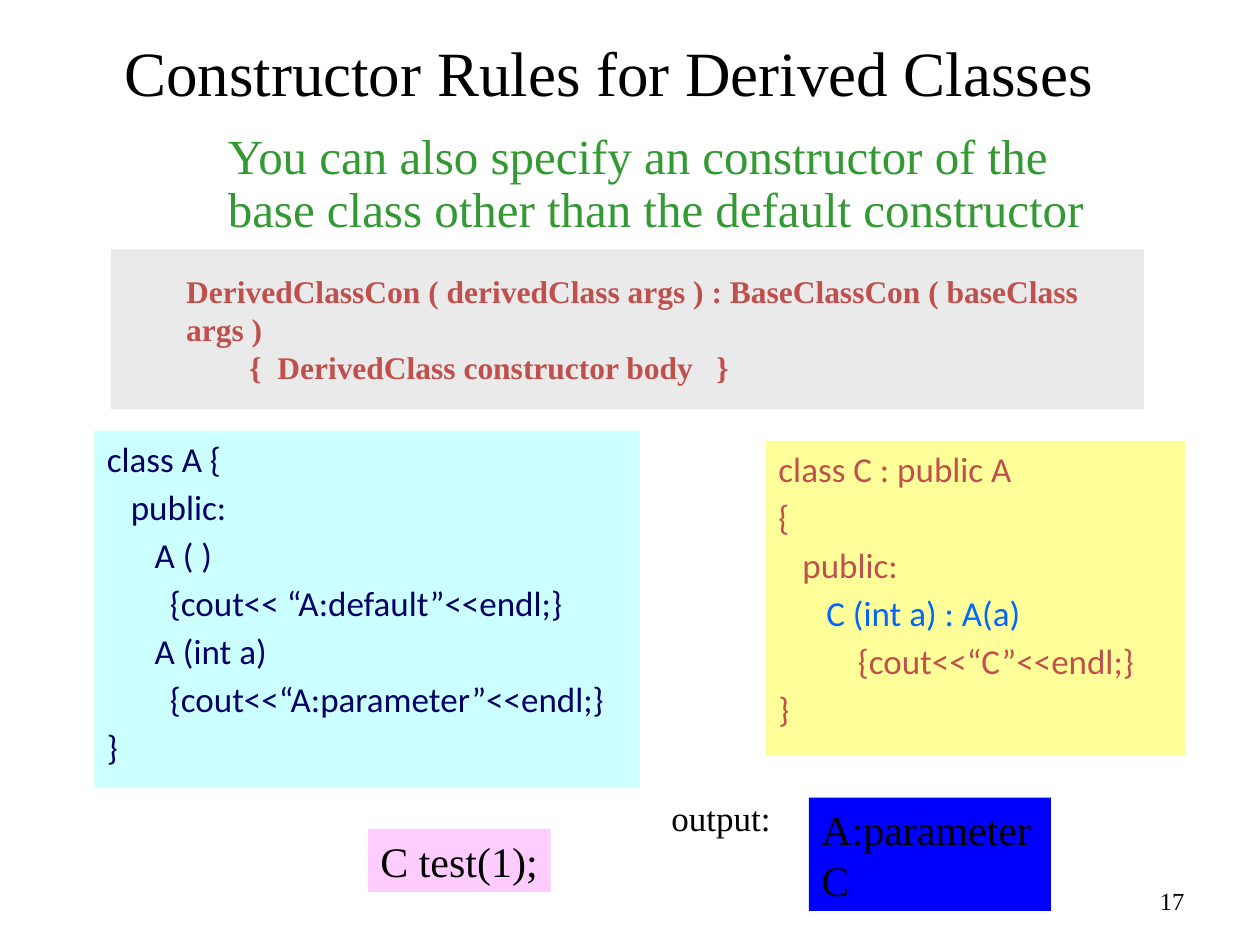
from pptx import Presentation
from pptx.dml.color import RGBColor
from pptx.enum.shapes import MSO_SHAPE
from pptx.enum.text import MSO_ANCHOR, MSO_AUTO_SIZE, PP_ALIGN
from pptx.util import Inches, Pt

RECT = MSO_SHAPE.RECTANGLE
TOP, MIDDLE, BOTTOM = MSO_ANCHOR.TOP, MSO_ANCHOR.MIDDLE, MSO_ANCHOR.BOTTOM
LEFT, CENTER, RIGHT = PP_ALIGN.LEFT, PP_ALIGN.CENTER, PP_ALIGN.RIGHT
FIXED = MSO_AUTO_SIZE.NONE
SERIF, SANS = "Times New Roman", "Calibri"

BLACK = RGBColor(0x00, 0x00, 0x00)
GREEN = RGBColor(0x33, 0x99, 0x33)
NAVY = RGBColor(0x00, 0x00, 0x66)
RED = RGBColor(0xC0, 0x50, 0x4D)
AZURE = RGBColor(0x00, 0x66, 0xFF)
CYAN = RGBColor(0xCC, 0xFF, 0xFF)
YELLOW = RGBColor(0xFF, 0xFF, 0x99)
PINK = RGBColor(0xFF, 0xCC, 0xFF)
BLUE = RGBColor(0x00, 0x00, 0xFF)
GREY = RGBColor(0xEA, 0xEA, 0xEA)


def write(shape, lines, size, color=BLACK, font=SERIF, bold=False, align=LEFT,
          anchor=TOP, wrap=True, before=0, spacing=None, inset=0.05):
    """Fill a shape with lines, each a (text, indent[, color]) tuple."""
    frame = shape.text_frame
    frame.auto_size = FIXED
    frame.word_wrap = wrap
    frame.vertical_anchor = anchor
    frame.margin_top = Inches(inset)
    for i, (text, indent, *tint) in enumerate(lines):
        para = frame.paragraphs[0] if i == 0 else frame.add_paragraph()
        para.alignment = align
        para.space_before = Pt(before)
        para.line_spacing = spacing
        props = para._p.get_or_add_pPr()
        props.set("marL", str(Inches(indent)))
        props.set("indent", "0")
        run = para.add_run()
        run.text = text
        run.font.name = font
        run.font.size = Pt(size)
        run.font.bold = bold
        run.font.color.rgb = tint[0] if tint else color


def label(slide, box, lines, size, **style):
    """Place plain text in a box."""
    write(slide.shapes.add_textbox(*map(Inches, box)), lines, size, **style)


def panel(slide, box, fill, lines, size, **style):
    """Place text on a filled rectangle without an outline."""
    shape = slide.shapes.add_shape(RECT, *map(Inches, box))
    shape.shadow.inherit = False
    shape.fill.solid()
    shape.fill.fore_color.rgb = fill
    shape.line.fill.background()
    write(shape, lines, size, **style)


def heading(slide, box):
    """Move and format the title placeholder."""
    title = slide.shapes.title
    title.left, title.top, title.width, title.height = map(Inches, box)
    write(title, [("Constructor Rules for Derived Classes ", 0)], 36,
          align=CENTER, anchor=BOTTOM)


def intro(slide, box):
    """Place the green statement of the rule."""
    label(slide, box, [("You can also specify an constructor of the base class "
                        "other than the default constructor", 0.38)],
          28, color=GREEN, before=5.6, spacing=0.9)


def syntax(slide, box):
    """Place the general form of a derived constructor."""
    panel(slide, box, GREY, [
        ("DerivedClassCon ( derivedClass args ) : BaseClassCon ( baseClass args )", 0.5),
        ("{  DerivedClass constructor body   }", 1),
    ], 18, color=RED, bold=True, inset=0.18)


def base(slide, box):
    """Place the code of the base class."""
    panel(slide, box, CYAN, [
        ("class A {", 0),
        ("public:", 0.19),
        ("A ( )", 0.38),
        ("{cout<< “A:default”<<endl;}", 0.5),
        ("A (int a)", 0.38),
        ("{cout<<“A:parameter”<<endl;}", 0.5),
        ("}", 0),
    ], 20, color=NAVY, font=SANS, before=3.5)


def derived(slide, box):
    """Place the code of the derived class."""
    panel(slide, box, YELLOW, [
        ("class C : public A", 0),
        ("{", 0),
        ("public:", 0.19),
        ("C (int a) : A(a)", 0.38, AZURE),
        ("{cout<<“C”<<endl;}", 0.63),
        ("}", 0),
    ], 20, color=RED, font=SANS, before=3.5)


def result(slide, call, name, out):
    """Place the test call, the output label and the output."""
    panel(slide, call, PINK, [("C test(1);", 0)], 24, wrap=False)
    panel(slide, out, BLUE, [("A:parameter", 0), ("C", 0)], 24)
    label(slide, name, [("output:", 0)], 20, wrap=False)


def main():
    """Build and save the slide."""
    deck = Presentation()
    deck.slide_width, deck.slide_height = Inches(10), Inches(7.5)
    slide = deck.slides.add_slide(deck.slide_layouts[5])
    heading(slide, (0, 0.17, 9.79, 0.75))
    intro(slide, (1.33, 1, 7.42, 1))
    syntax(slide, (0.88, 1.98, 8.2, 1.27))
    base(slide, (0.75, 3.42, 4.33, 2.83))
    derived(slide, (6.08, 3.5, 3.33, 2.5))
    result(slide, (2.92, 6.58, 1.45, 0.5), (5.23, 6.27, 0.99, 0.43),
           (6.42, 6.33, 1.92, 0.9))
    label(slide, (7.17, 6.95, 2.33, 0.4), [("17", 0)], 14,
          align=RIGHT, anchor=MIDDLE)
    deck.save("out.pptx")


if __name__ == "__main__":
    main()
